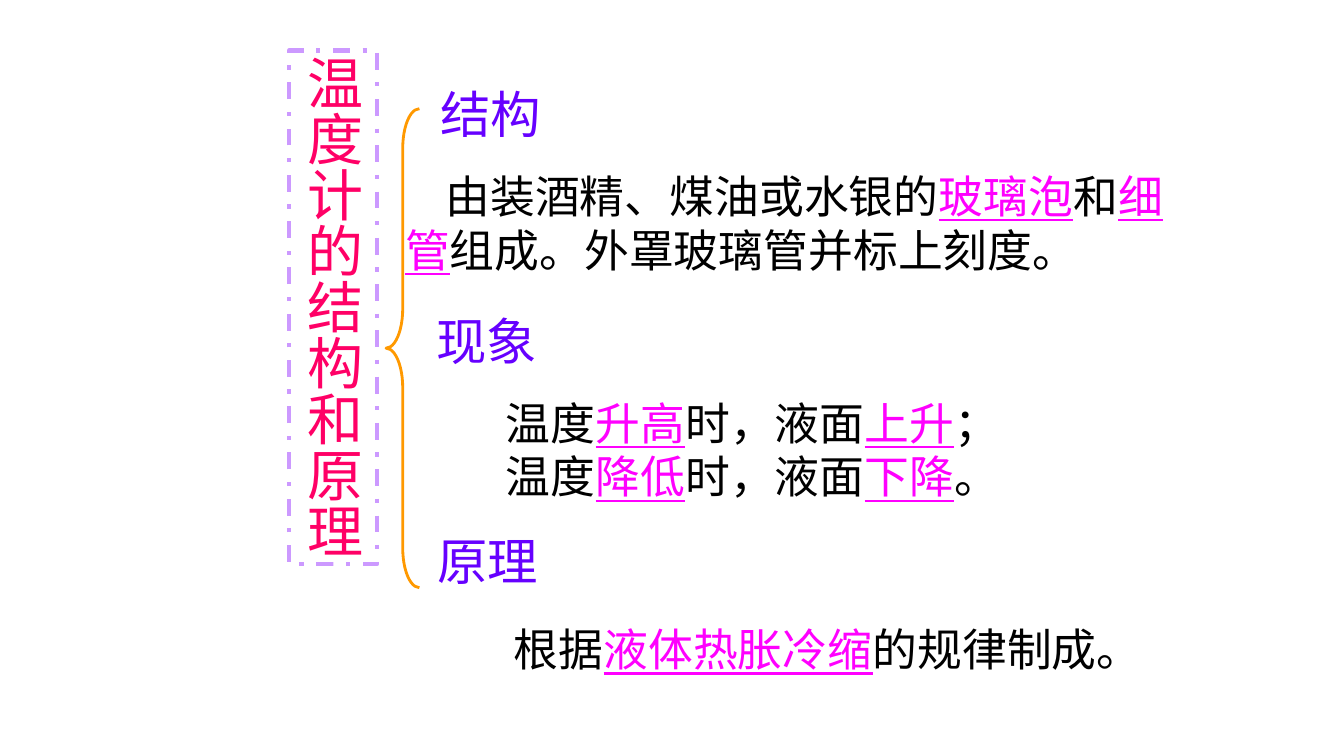
"""Build the summary slide on the structure and principle of the thermometer."""
from dataclasses import dataclass

from lxml import etree
from pptx import Presentation
from pptx.dml.color import RGBColor
from pptx.enum.dml import MSO_LINE
from pptx.enum.shapes import MSO_SHAPE
from pptx.enum.text import MSO_ANCHOR, MSO_AUTO_SIZE, PP_ALIGN
from pptx.oxml.ns import qn
from pptx.util import Cm, Pt

DASH_DOT = MSO_LINE.DASH_DOT
LEFT_BRACE = MSO_SHAPE.LEFT_BRACE
TOP = MSO_ANCHOR.TOP
NO_AUTOFIT = MSO_AUTO_SIZE.NONE
LEFT, CENTER = PP_ALIGN.LEFT, PP_ALIGN.CENTER
TITLE_ONLY = 5


@dataclass(frozen=True)
class Theme:
    """Colours, fonts and type sizes of the slide."""
    title: str = "FF0066"
    heading: str = "6600FF"
    body: str = "000000"
    key: str = "FF00FF"
    frame: str = "CC99FF"
    brace: str = "FF9900"
    paper: str = "FFFFFF"
    display_font: str = "Times New Roman"
    body_font: str = "Noto Sans CJK SC"
    title_size: int = 40
    heading_size: int = 36
    body_size: int = 32
    leading: float = 1.2


THEME = Theme()
TITLE = "温度计的结构和原理"
TITLE_BOX = (7.29, 1.27, 2.21, 12.95)
BRACE_BOX = (9.73, 2.74, 0.84, 12.07)
BRACE_CURVE = 1.19

# Every second run of a text is a key term.
SECTIONS = [
    {"heading": "结构", "heading_box": (9.73, 1.98, 5.28, 1.8),
     "body_box": (9.96, 4.12, 20.12, 3.0), "indent": 1.02,
     "runs": ["由装酒精、煤油或水银的", "玻璃泡", "和", "细管",
              "组成。外罩玻璃管并标上刻度。"]},
    {"heading": "现象", "heading_box": (9.73, 7.7, 5.08, 1.8),
     "body_box": (12.5, 9.84, 13.34, 3.0), "indent": 0,
     "runs": ["温度", "升高", "时，液面", "上升", "；温度", "降低",
              "时，液面", "下降", "。"]},
    {"heading": "原理", "heading_box": (9.53, 13.23, 5.51, 1.8),
     "body_box": (12.7, 15.55, 16.94, 1.63), "indent": 0,
     "runs": ["根据", "液体热胀冷缩", "的规律制成。"]},
]


def cm(box):
    return [Cm(v) for v in box]


def add_run(p, text, size, color, font, underline=False):
    r = p.add_run()
    r.text = text
    f = r.font
    f.size, f.name, f.underline, f.bold = Pt(size), font, underline, False
    f.color.rgb = RGBColor.from_string(color)
    ea = etree.SubElement(r._r.get_or_add_rPr(), qn("a:ea"))
    ea.set("typeface", THEME.body_font)


def set_paragraph(tf, align, size):
    tf.auto_size, tf.vertical_anchor = NO_AUTOFIT, TOP
    p = tf.paragraphs[0]
    p.alignment, p.space_before = align, Pt(0)
    p.line_spacing = Pt(size * THEME.leading)
    return p


def add_text(s, box, align, size):
    tf = s.shapes.add_textbox(*cm(box)).text_frame
    tf.word_wrap = True
    return set_paragraph(tf, align, size)


def add_section(s, section):
    p = add_text(s, section["heading_box"], CENTER, THEME.heading_size)
    add_run(p, section["heading"], THEME.heading_size, THEME.heading,
            THEME.display_font)
    p = add_text(s, section["body_box"], LEFT, THEME.body_size)
    p._p.get_or_add_pPr().set("indent", str(Cm(section["indent"])))
    for i, text in enumerate(section["runs"]):
        is_key = i % 2 == 1
        add_run(p, text, THEME.body_size, THEME.key if is_key else THEME.body,
                THEME.body_font, is_key)


def set_title(s):
    sp = s.shapes.title
    sp.left, sp.top, sp.width, sp.height = cm(TITLE_BOX)
    sp.fill.solid()
    sp.fill.fore_color.rgb = RGBColor.from_string(THEME.paper)
    sp.line.color.rgb = RGBColor.from_string(THEME.frame)
    sp.line.width, sp.line.dash_style = Pt(3), DASH_DOT
    tf = sp.text_frame
    tf.word_wrap = False
    p = set_paragraph(tf, LEFT, THEME.title_size)
    p.line_spacing = 1.0
    tf._txBody.bodyPr.set("vert", "eaVert")
    add_run(p, TITLE, THEME.title_size, THEME.title, THEME.display_font)


def add_brace(s):
    sp = s.shapes.add_shape(LEFT_BRACE, *cm(BRACE_BOX))
    sp.adjustments[0] = BRACE_CURVE
    sp.shadow.inherit = False
    sp.fill.background()
    sp.line.color.rgb = RGBColor.from_string(THEME.brace)
    sp.line.width = Pt(2)


def main():
    prs = Presentation()
    prs.slide_width, prs.slide_height = Cm(33.87), Cm(19.05)
    s = prs.slides.add_slide(prs.slide_layouts[TITLE_ONLY])
    set_title(s)
    for section in SECTIONS:
        add_section(s, section)
    add_brace(s)
    prs.save("out.pptx")


if __name__ == "__main__":
    main()
